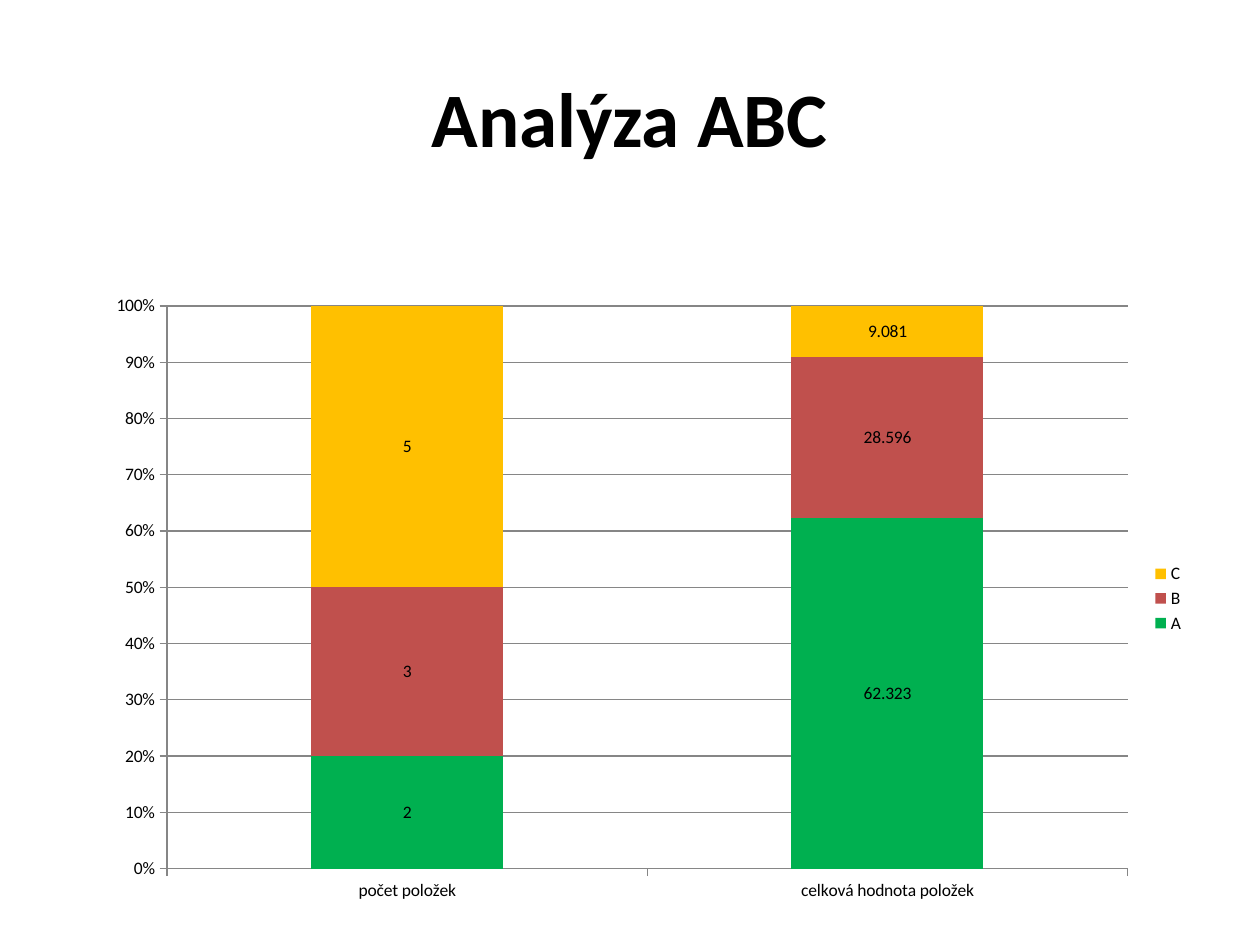
from dataclasses import dataclass

from pptx import Presentation
from pptx import util as u
from pptx.chart.data import CategoryChartData
from pptx.dml.color import RGBColor
from pptx.enum import chart as ch
from pptx.enum import text

EMU_PER_PX = 9144  # 100 px to the inch


def px(length):
    return u.Emu(length * EMU_PER_PX)


def rgb(value):
    return RGBColor.from_string(value)


@dataclass(frozen=True)
class Theme:
    font: str = "Calibri"
    ink: str = "000000"
    paper: str = "FFFFFF"
    rule: str = "868686"
    title_size: int = 44
    chart_size: int = 10


class SlideBuilder:
    def __init__(self, prs, theme):
        self.theme = theme
        self.slide = prs.slides.add_slide(prs.slide_layouts[5])  # title only
        background = self.slide.background.fill
        background.solid()
        background.fore_color.rgb = rgb(theme.paper)

    def style_font(self, font, size, bold=False):
        font.name = self.theme.font
        font.size = u.Pt(size)
        font.bold = bold
        font.color.rgb = rgb(self.theme.ink)

    def title(self, wording, left, top, width, height):
        heading = self.slide.shapes.title
        heading.left, heading.top = px(left), px(top)
        heading.width, heading.height = px(width), px(height)
        frame = heading.text_frame
        frame.word_wrap = True
        frame.vertical_anchor = text.MSO_ANCHOR.MIDDLE
        line = frame.paragraphs[0]
        line.alignment = text.PP_ALIGN.CENTER
        run = line.add_run()
        run.text = wording
        self.style_font(run.font, self.theme.title_size, bold=True)

    def stacked_shares(self, categories, classes, left, top, width, height):
        data = CategoryChartData()
        data.categories = categories
        for name, values, _ in classes:
            data.add_series(name, values)
        chart = self.slide.shapes.add_chart(
            ch.XL_CHART_TYPE.COLUMN_STACKED_100,
            px(left), px(top), px(width), px(height), data).chart
        self.style_font(chart.font, self.theme.chart_size)
        chart.has_title = False

        # Columns and their values
        plot = chart.plots[0]
        plot.gap_width, plot.overlap = 150, 100
        plot.vary_by_categories = False
        for series, (_, _, color) in zip(plot.series, classes):
            series.format.fill.solid()
            series.format.fill.fore_color.rgb = rgb(color)
            series.data_labels.show_value = True

        # Axes and gridlines
        shares = chart.value_axis
        shares.has_major_gridlines = True
        shares.tick_labels.number_format = "0%"
        shares.tick_labels.number_format_is_linked = False
        shares.major_unit = 0.1
        for axis in (chart.category_axis, shares):
            axis.major_tick_mark = ch.XL_TICK_MARK.OUTSIDE
            axis.minor_tick_mark = ch.XL_TICK_MARK.NONE
        for ruled in (chart.category_axis, shares, shares.major_gridlines):
            ruled.format.line.color.rgb = rgb(self.theme.rule)
            ruled.format.line.width = u.Pt(0.75)

        # Legend
        chart.has_legend = True
        chart.legend.position = ch.XL_LEGEND_POSITION.RIGHT
        chart.legend.include_in_layout = False


def main():
    prs = Presentation()
    prs.slide_width, prs.slide_height = px(1000), px(750)
    abc = SlideBuilder(prs, Theme())
    abc.title("Analýza ABC", 50, 30, 900, 125)
    abc.stacked_shares(
        ["počet položek", "celková hodnota položek"],
        [("A", (2, 62.323), "00B050"),
         ("B", (3, 28.596), "C0504D"),
         ("C", (5, 9.081), "FFC000")],
        75, 225, 875, 500)
    prs.save("out.pptx")


if __name__ == "__main__":
    main()
